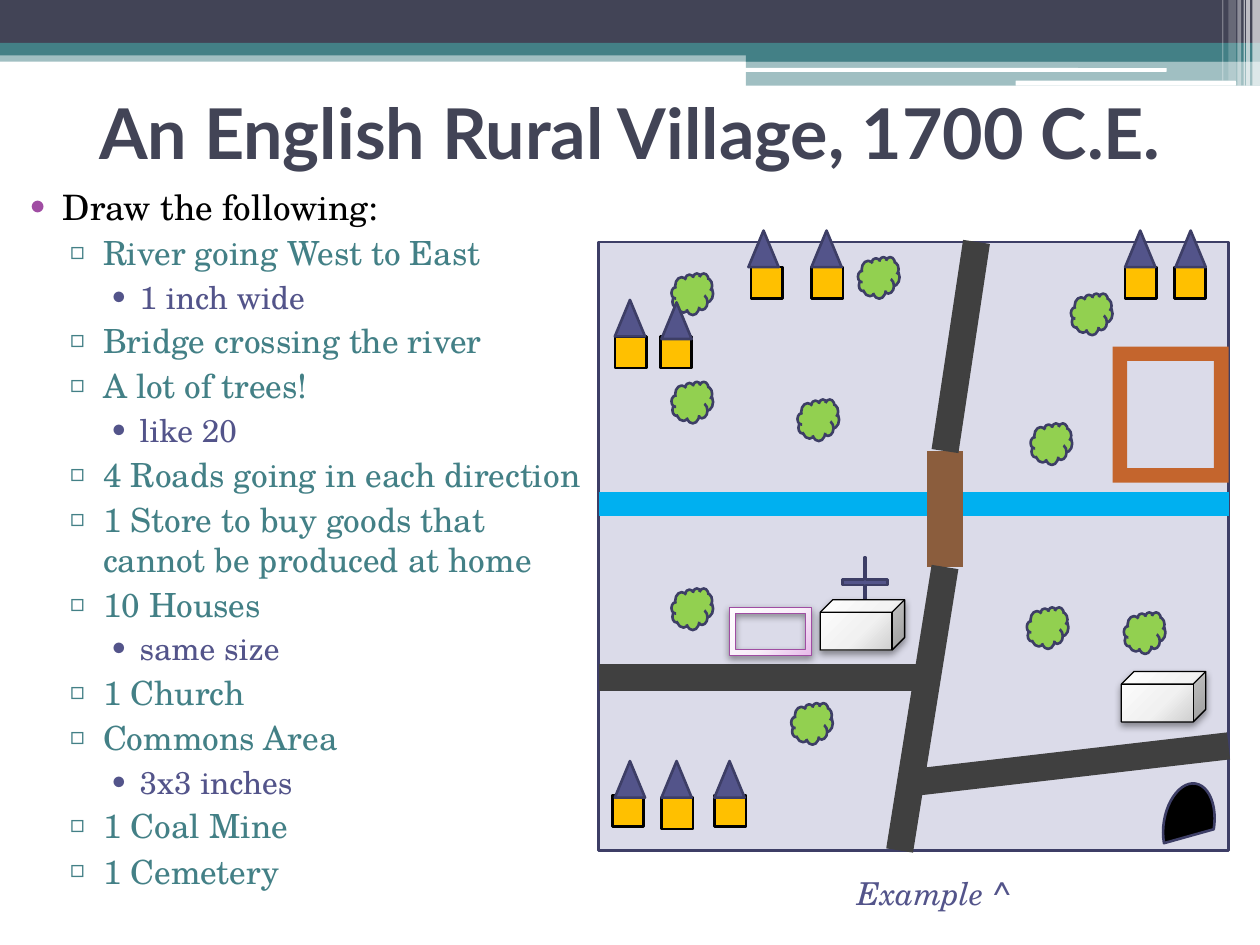
from lxml import etree
from pptx import Presentation
from pptx.dml.color import RGBColor
from pptx.enum.shapes import MSO_CONNECTOR, MSO_SHAPE
from pptx.enum.text import MSO_ANCHOR, PP_ALIGN
from pptx.oxml.ns import qn
from pptx.util import Inches, Pt

RECT, ROUND = MSO_SHAPE.RECTANGLE, MSO_SHAPE.ROUNDED_RECTANGLE
CLOUD, ROOF, CUBE = MSO_SHAPE.CLOUD, MSO_SHAPE.ISOSCELES_TRIANGLE, MSO_SHAPE.CUBE
FRAME, CROSS, CHORD = MSO_SHAPE.FRAME, MSO_SHAPE.CROSS, MSO_SHAPE.CHORD
STRAIGHT = MSO_CONNECTOR.STRAIGHT
CENTER, LEFT, MIDDLE = PP_ALIGN.CENTER, PP_ALIGN.LEFT, MSO_ANCHOR.MIDDLE
SERIF, SANS = "TeX Gyre Schola", "Lato"
DARK, TEAL, WHITE, BLACK = "424456", "438086", "FFFFFF", "000000"
INDIGO, EDGE, PLUM, ROAD = "53548A", "3D3E66", "A04DA3", "404040"
STONE = ("FEFEFE", "F1F1F1", "C5C5C5")
PINK = ("FEFEFF", "F9EFF9", "E8BBEA")

LEVELS = [
    dict(size=20, color=BLACK, bullet=("•", PLUM), indent=(0.4, -0.28)),
    dict(size=19, color=TEAL, bullet=("▫", TEAL), indent=(0.72, -0.27)),
    dict(size=18, color=INDIGO, bullet=("•", INDIGO), indent=(1.01, -0.24)),
]
TASKS = [
    (0, "Draw the following:"),
    (1, "River going West to East"),
    (2, "1 inch wide"),
    (1, "Bridge crossing the river"),
    (1, "A lot of trees!"),
    (2, "like 20"),
    (1, "4 Roads going in each direction"),
    (1, "1 Store to buy goods that cannot be produced at home"),
    (1, "10 Houses"),
    (2, "same size"),
    (1, "1 Church"),
    (1, "Commons Area"),
    (2, "3x3 inches"),
    (1, "1 Coal Mine"),
    (1, "1 Cemetery"),
]
BARS = [
    (RECT, 0, 0.4, 10, 0.09, TEAL, 50),
    (RECT, 0, 0, 10, 0.34, DARK, 100),
    (RECT, 0, 0.34, 10, 0.1, TEAL, 100),
    (RECT, 5.92, 0.39, 4.08, 0.1, TEAL, 100),
    (RECT, 5.92, 0.48, 4.08, 0.2, TEAL, 50),
    (ROUND, 5.91, 0.54, 3.35, 0.03, WHITE, 100),
    (ROUND, 8.06, 0.64, 1.75, 0.04, WHITE, 100),
    (RECT, 9.94, 0, 0.06, 0.68, WHITE, 65),
    (RECT, 9.89, 0, 0.03, 0.68, WHITE, 65),
    (RECT, 9.87, 0, 0.01, 0.68, WHITE, 60),
    (RECT, 9.82, 0, 0.03, 0.68, WHITE, 40),
    (RECT, 9.75, 0, 0.06, 0.64, WHITE, 20),
    (RECT, 9.7, 0, 0.01, 0.64, WHITE, 30),
]
TREES = [(0.58, 0.25), (4.17, 2.94), (0.58, 2.75), (0.58, 1.11), (3.43, 1.44),
         (1.53, 3.66), (1.58, 1.25), (2.06, 0.12), (3.4, 2.9), (3.75, 0.41)]
ROADS = [(2.75, 1.66, 3, 0), (2.39, 4.83, 2.75, 2.58),
         (2.5, 4.29, 5, 4), (2.57, 3.46, 0, 3.46)]
HOUSES = [((1.21, 0.2), (1.19, -0.09)), ((0.49, 0.75), (0.5, 0.48)),
          ((0.92, 4.39), (0.92, 4.12)), ((1.69, 0.2), (1.69, -0.09)),
          ((0.11, 4.39), (0.13, 4.12)), ((0.5, 4.41), (0.5, 4.12)),
          ((4.57, 0.2), (4.58, -0.09)), ((4.18, 0.2), (4.18, -0.09)),
          ((0.13, 0.75), (0.13, 0.46))]


def paint(color):
    """Turn a hex string into a colour."""
    return RGBColor.from_string(color)


def add(parent, tag, **attrs):
    """Append a drawing element with its attributes."""
    node = etree.SubElement(parent, qn(tag))
    for key, value in attrs.items():
        node.set(key, str(value))
    return node


def place(item, box):
    """Move and size an item to a box in inches."""
    item.left, item.top, item.width, item.height = map(Inches, box)


def write(para, text, font=SERIF, size=18, color=INDIGO, bold=False,
          italic=False, align=LEFT, before=0, indent=None, bullet=None):
    """Put one formatted run in a paragraph."""
    run = para.add_run()
    run.text = text
    run.font.name, run.font.size = font, Pt(size)
    run.font.bold, run.font.italic = bold, italic
    run.font.color.rgb = paint(color)
    para.alignment, para.space_before = align, Pt(before)
    if bullet:
        sign, tint = bullet
        props = para._p.get_or_add_pPr()
        props.set("marL", str(Inches(indent[0])))
        props.set("indent", str(Inches(indent[1])))
        add(add(props, "a:buClr"), "a:srgbClr", val=tint)
        add(props, "a:buFont", typeface=SERIF)
        add(props, "a:buChar", char=sign)


def draw(slide, kind, box, fill=None, line=None, width=1.5, alpha=100, adj=None, turn=0):
    """Add a preset shape."""
    item = slide.shapes.add_shape(kind, *map(Inches, box))
    item.shadow.inherit = False
    item.rotation = turn
    if adj is not None:
        item.adjustments[0] = adj
    if fill:
        item.fill.solid()
        item.fill.fore_color.rgb = paint(fill)
        if alpha < 100:
            tint = item.element.spPr.find(".//" + qn("a:srgbClr"))
            add(tint, "a:alpha", val=alpha * 1000)
    if line:
        item.line.color.rgb = paint(line)
        item.line.width = Pt(width)
    else:
        item.line.fill.background()
    return item


def shade(item, tones):
    """Give a shape a round gradient and a soft shadow."""
    props = item.element.spPr
    grad = etree.Element(qn("a:gradFill"), rotWithShape="1")
    stops = add(grad, "a:gsLst")
    for pos, tone in zip((0, 55, 100), tones):
        add(add(stops, "a:gs", pos=pos * 1000), "a:srgbClr", val=tone)
    track = add(grad, "a:path", path="circle")
    add(track, "a:fillToRect", l=-40000, t=-90000, r=140000, b=190000)
    props.insert(2, grad)
    cast = add(props.find(qn("a:effectLst")), "a:outerShdw", blurRad=Pt(4.1),
               dist=Pt(2), dir=5400000, rotWithShape=0)
    add(add(cast, "a:srgbClr", val=BLACK), "a:alpha", val=40000)


def link(slide, ends, color, width):
    """Add a straight line."""
    item = slide.shapes.add_connector(STRAIGHT, *map(Inches, ends))
    item.line.color.rgb = paint(color)
    item.line.width = Pt(width)
    add(item.element.spPr, "a:effectLst")


def banner(slide, box):
    """Draw the bars along the top."""
    for kind, x, y, w, h, color, alpha in BARS:
        draw(slide, kind, (box[0] + x, box[1] + y, w, h), color, alpha=alpha)


def head(slide, box):
    """Fill the title."""
    title = slide.shapes.title
    place(title, box)
    title.text_frame.vertical_anchor = MIDDLE
    write(title.text_frame.paragraphs[0], "An English Rural Village, 1700 C.E.",
          font=SANS, size=40, color=DARK, bold=True, align=CENTER)


def tasks(slide, box):
    """Write the list of things to draw."""
    frame = slide.shapes.add_textbox(*map(Inches, box)).text_frame
    frame.word_wrap = True
    for i, (level, text) in enumerate(TASKS):
        para = frame.add_paragraph() if i else frame.paragraphs[0]
        para.level = level
        write(para, text, before=3, **LEVELS[level])


def village(slide, box):
    """Draw the map of the village."""
    left, top, wide, high = box

    def at(x, y, *size):
        """Shift a spot on the map to the slide."""
        return (left + x, top + y, *size)

    def line(x1, y1, x2, y2, color, width):
        """Draw a line on the map."""
        link(slide, at(x1, y1) + at(x2, y2), color, width)

    draw(slide, RECT, box, "DBDBE9", EDGE)
    line(0, 2.08, wide, 2.08, "00B0F0", 13.75)
    line(2.75, 1.66, 2.75, 2.58, "8B5D3D", 21)
    for x, y in TREES:
        draw(slide, CLOUD, at(x, y, 0.33, 0.33), "92D050", EDGE)
    for road in ROADS:
        line(*road, ROAD, 15.5)
    for wall, roof in HOUSES:
        draw(slide, RECT, at(*wall, 0.25, 0.25), "FFC000", BLACK)
        draw(slide, ROOF, at(*roof, 0.24, 0.29), INDIGO, EDGE)
    draw(slide, CROSS, at(1.92, 2.52, 0.39, 0.36), INDIGO, EDGE, adj=0.48, turn=90)
    for x, y in ((4.15, 3.41), (1.76, 2.84)):
        shade(draw(slide, CUBE, at(x, y, 0.67, 0.4), line=BLACK, width=0.75), STONE)
    draw(slide, FRAME, at(4.08, 0.83, 0.92, 1.08), "C4652D")
    draw(slide, CHORD, at(4.35, 4.43, 0.67, 0.4), BLACK, EDGE, turn=99.2)
    shade(draw(slide, FRAME, at(1.04, 2.9, 0.65, 0.38), line=PLUM, width=0.75), PINK)


def label(slide, box):
    """Write the caption under the map."""
    frame = slide.shapes.add_textbox(*map(Inches, box)).text_frame
    frame.word_wrap = True
    write(frame.paragraphs[0], "Example ^", italic=True, align=CENTER)


def main():
    """Build the deck."""
    deck = Presentation()
    deck.slide_width, deck.slide_height = Inches(10), Inches(7.5)
    slide = deck.slides.add_slide(deck.slide_layouts[5])
    banner(slide, (0, 0, 10, 0.68))
    head(slide, (0, 0.58, 10, 0.92))
    tasks(slide, (0, 1.42, 4.83, 6.08))
    village(slide, (4.75, 1.92, 5, 4.83))
    label(slide, (6.01, 6.89, 2.81, 0.4))
    deck.save("out.pptx")


if __name__ == "__main__":
    main()
